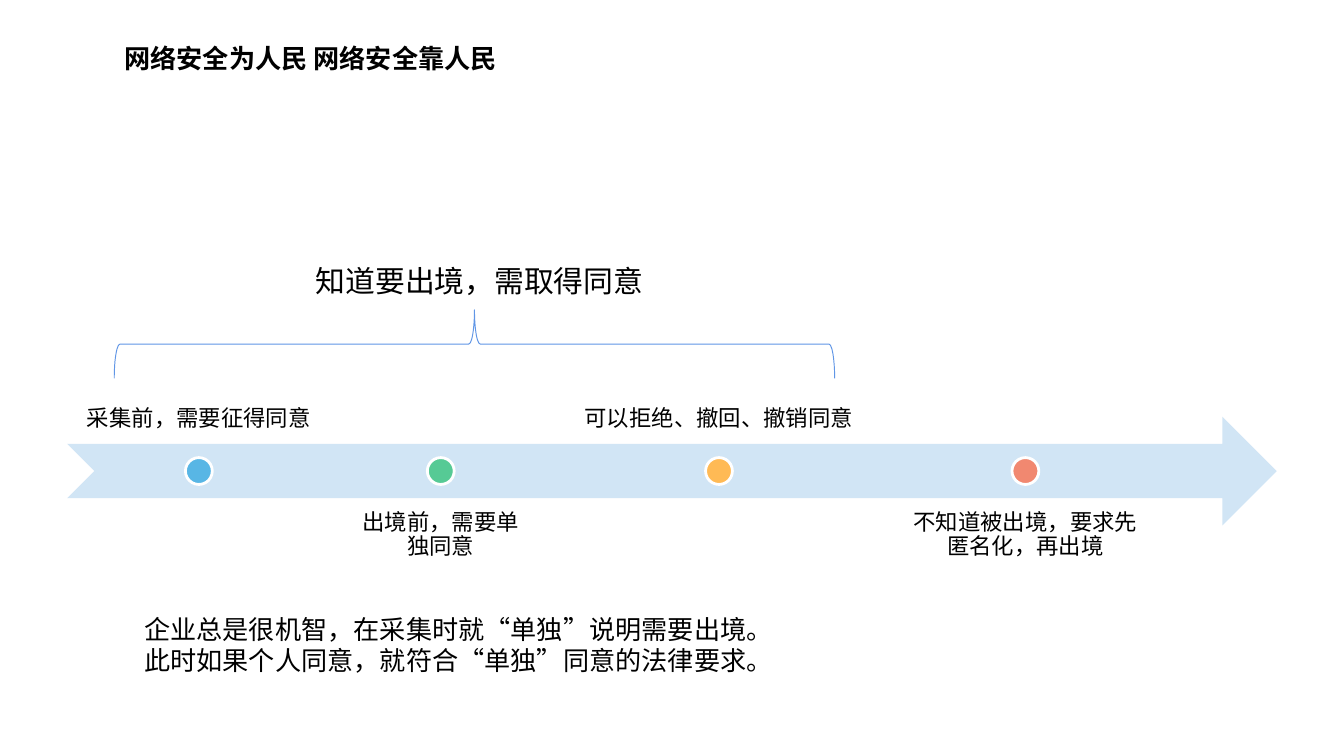
from lxml import etree
from pptx import Presentation
from pptx.dml.color import RGBColor
from pptx.enum.shapes import MSO_SHAPE
from pptx.enum.text import MSO_ANCHOR, MSO_AUTO_SIZE, PP_ALIGN
from pptx.oxml.ns import qn
from pptx.util import Emu, Pt

PX = 4572  # 200 px to the inch
SLIDE_W, SLIDE_H = 2000, 1125
TOP, MIDDLE, BOTTOM = MSO_ANCHOR.TOP, MSO_ANCHOR.MIDDLE, MSO_ANCHOR.BOTTOM
LEFT, CENTER = PP_ALIGN.LEFT, PP_ALIGN.CENTER
ARROW, DOT, BRACE = MSO_SHAPE.NOTCHED_RIGHT_ARROW, MSO_SHAPE.OVAL, MSO_SHAPE.LEFT_BRACE
LATIN, CJK = "Arial", "Noto Sans CJK SC"
COLORS = {
    "text": "000000", "white": "FFFFFF", "arrow": "D1E5F5", "brace": "6096E6",
    "blue": "58B6E5", "green": "56CA95", "orange": "FFBA55", "red": "F18870",
}

# Content
TITLE = "网络安全为人民 网络安全靠人民"
BRACE_LABEL = "知道要出境，需取得同意"
NOTE = "企业总是很机智，在采集时就“单独”说明需要出境。此时如果个人同意，就符合“单独”同意的法律要求。"
# label, centre x, label width, dot colour; labels alternate above and below
STAGES = [
    ("采集前，需要征得同意", 296, 392, "blue"),
    ("出境前，需要单独同意", 656, 298, "green"),
    ("可以拒绝、撤回、撤销同意", 1070, 500, "orange"),
    ("不知道被出境，要求先匿名化，再出境", 1526, 384, "red"),
]
ARROW_BOX = (100, 620, 1800, 162)
DOT_SIZE = 40
LABEL_H = 162
LABEL_TOPS = (498, 742)
LABEL_INSET = 18


def color(name):
    return RGBColor.from_string(COLORS[name])


def box(x, y, w, h):
    return [Emu(round(v * PX)) for v in (x, y, w, h)]


def fill_text(sp, text, size, align, anchor, font=LATIN, bold=False):
    tf = sp.text_frame
    tf.text = text
    tf.word_wrap = True
    tf.auto_size = MSO_AUTO_SIZE.NONE
    tf.vertical_anchor = anchor
    p = tf.paragraphs[0]
    p.alignment = align
    r = p.runs[0]
    r.font.size = Pt(size)
    r.font.bold = bold
    r.font.color.rgb = color("text")
    r.font.name = font
    etree.SubElement(r.font._element, qn("a:ea"), typeface=CJK)
    return tf


def add_text(bounds, *args):
    return fill_text(s.shapes.add_textbox(*box(*bounds)), *args)


def add_shape(kind, bounds, fill=None, line=None, width=0):
    sp = s.shapes.add_shape(kind, *box(*bounds))
    sp.shadow.inherit = False
    if fill:
        sp.fill.solid()
        sp.fill.fore_color.rgb = color(fill)
    else:
        sp.fill.background()
    if line:
        sp.line.color.rgb = color(line)
        sp.line.width = Pt(width)
    else:
        sp.line.fill.background()
    return sp


prs = Presentation()
prs.slide_width, prs.slide_height = Emu(SLIDE_W * PX), Emu(SLIDE_H * PX)
s = prs.slides.add_slide(prs.slide_layouts[5])

# Title
title = s.shapes.title
title.left, title.top, title.width, title.height = box(165, 53, 958, 68)
fill_text(title, TITLE, 14, LEFT, TOP, CJK, True)

# Timeline arrow with its stages
add_shape(ARROW, ARROW_BOX, "arrow")
axis_y = ARROW_BOX[1] + ARROW_BOX[3] / 2
for i, (label, cx, width, dot) in enumerate(STAGES):
    below = i % 2
    tf = add_text((cx - width / 2, LABEL_TOPS[below], width, LABEL_H),
                  label, 12, CENTER, TOP if below else BOTTOM)
    tf.margin_left = tf.margin_right = tf.margin_top = tf.margin_bottom = Emu(LABEL_INSET * PX)
    tf.paragraphs[0].line_spacing = 0.9
    add_shape(DOT, (cx - DOT_SIZE / 2, axis_y - DOT_SIZE / 2, DOT_SIZE, DOT_SIZE),
              dot, "white", 1.5)

# Note under the timeline
add_text((195, 890, 1006, 138), NOTE, 14, LEFT, MIDDLE)

# Brace over the first three stages
brace = add_shape(BRACE, (655, -24, 102, 1072), line="brace", width=0.5)
brace.rotation = 90
add_text((427, 372, 574, 90), BRACE_LABEL, 16, CENTER, MIDDLE)

prs.save("out.pptx")
